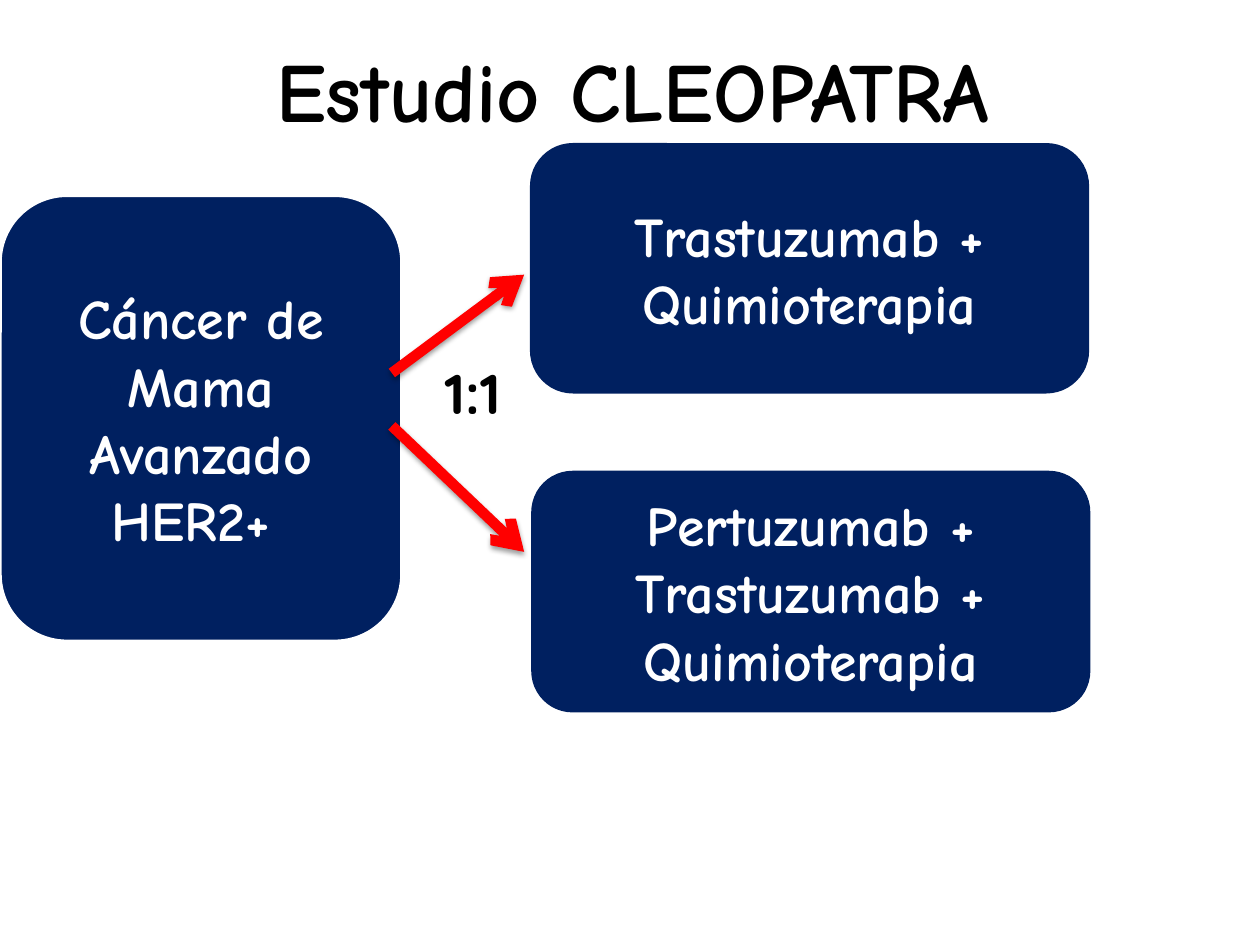
from dataclasses import dataclass

import lxml.etree
import pptx
import pptx.dml.color
import pptx.enum.shapes
import pptx.enum.text
import pptx.oxml.ns
import pptx.util

COLORS = {"navy": "002060", "white": "FFFFFF", "black": "000000", "red": "FF0000"}
BODY_FONT = "Comic Neue"
RATIO_FONT = "Quicksand"
SLIDE_WIDTH = pptx.util.Inches(10)
SLIDE_HEIGHT = pptx.util.Inches(7.5)
CENTER = pptx.enum.text.PP_ALIGN.CENTER
LEFT = pptx.enum.text.PP_ALIGN.LEFT


@dataclass(frozen=True)
class Area:
    """A rectangle in percent of the slide's width and height."""
    left: float
    top: float
    width: float
    height: float

    def lengths(self) -> tuple[int, int, int, int]:
        return (across(self.left), down(self.top),
                across(self.width), down(self.height))


@dataclass(frozen=True)
class Box:
    area: Area
    lines: tuple[str, ...]
    outline: str = "navy"


@dataclass(frozen=True)
class Label:
    area: Area
    text: str
    font: str
    size: int
    alignment: pptx.enum.text.PP_ALIGN
    wrap: bool


@dataclass(frozen=True)
class Arrow:
    """Start and end heights; both arrows span the same gap."""
    start_y: float
    end_y: float


ARROW_START_X, ARROW_END_X = 31.1, 41.6

BOXES = (
    Box(Area(0, 20.67, 31.9, 47.2),
        ("Cáncer de Mama", "Avanzado", "HER2+ "), "white"),
    Box(Area(42.2, 15.33, 44.1, 26.13), ("Trastuzumab + Quimioterapia",)),
    Box(Area(42.3, 50, 44.1, 25.2),
        ("Pertuzumab + Trastuzumab + Quimioterapia",)),
)
LABELS = (
    Label(Area(4.3, 3.47, 91.8, 19.07), "Estudio CLEOPATRA",
          BODY_FONT, 48, CENTER, True),
    Label(Area(34.3, 37.33, 8.3, 8.53), "1:1", RATIO_FONT, 32, LEFT, False),
)
ARROWS = (Arrow(39.47, 29.07), Arrow(45.07, 58.4))


def across(percent: float) -> int:
    return round(SLIDE_WIDTH * percent / 100)


def down(percent: float) -> int:
    return round(SLIDE_HEIGHT * percent / 100)


def rgb(color: str) -> pptx.dml.color.RGBColor:
    return pptx.dml.color.RGBColor.from_string(COLORS[color])


def write_lines(text_frame, lines: tuple[str, ...], font: str, size: int,
                color: str, alignment: pptx.enum.text.PP_ALIGN) -> None:
    for index, line in enumerate(lines):
        paragraph = text_frame.add_paragraph() if index else text_frame.paragraphs[0]
        paragraph.alignment = alignment
        run = paragraph.add_run()
        run.text = line
        run.font.name = font
        run.font.size = pptx.util.Pt(size)
        run.font.bold = True
        run.font.color.rgb = rgb(color)


def draw_box(slide, box: Box) -> None:
    shape = slide.shapes.add_shape(
        pptx.enum.shapes.MSO_SHAPE.ROUNDED_RECTANGLE, *box.area.lengths())
    shape.shadow.inherit = False
    shape.fill.solid()
    shape.fill.fore_color.rgb = rgb("navy")
    shape.line.color.rgb = rgb(box.outline)
    shape.line.width = pptx.util.Pt(2)
    shape.text_frame.word_wrap = True
    shape.text_frame.vertical_anchor = pptx.enum.text.MSO_ANCHOR.MIDDLE
    write_lines(shape.text_frame, box.lines, BODY_FONT, 32, "white", CENTER)


def draw_label(slide, label: Label) -> None:
    text_frame = slide.shapes.add_textbox(*label.area.lengths()).text_frame
    text_frame.word_wrap = label.wrap
    write_lines(text_frame, (label.text,), label.font, label.size,
                "black", label.alignment)


def add_child(parent, tag: str, **attributes: str):
    return lxml.etree.SubElement(parent, pptx.oxml.ns.qn(tag), attributes)


def draw_arrow(slide, arrow: Arrow) -> None:
    connector = slide.shapes.add_connector(
        pptx.enum.shapes.MSO_CONNECTOR.STRAIGHT,
        across(ARROW_START_X), down(arrow.start_y),
        across(ARROW_END_X), down(arrow.end_y))
    connector.line.color.rgb = rgb("red")
    connector.line.width = pptx.util.Pt(6)
    add_child(connector.line._get_or_add_ln(), "a:tailEnd", type="arrow")
    effects = add_child(connector._element.spPr, "a:effectLst")
    shadow = add_child(effects, "a:outerShdw",
                       blurRad=str(pptx.util.Pt(3.1)), dist=str(pptx.util.Pt(1.6)),
                       dir="5400000", rotWithShape="0")
    shadow_color = add_child(shadow, "a:srgbClr", val=COLORS["black"])
    add_child(shadow_color, "a:alpha", val="38000")


def main() -> None:
    presentation = pptx.Presentation()
    presentation.slide_width = SLIDE_WIDTH
    presentation.slide_height = SLIDE_HEIGHT
    slide = presentation.slides.add_slide(presentation.slide_layouts[6])
    for box in BOXES:
        draw_box(slide, box)
    for label in LABELS:
        draw_label(slide, label)
    for arrow in ARROWS:
        draw_arrow(slide, arrow)
    presentation.save("out.pptx")


if __name__ == "__main__":
    main()
